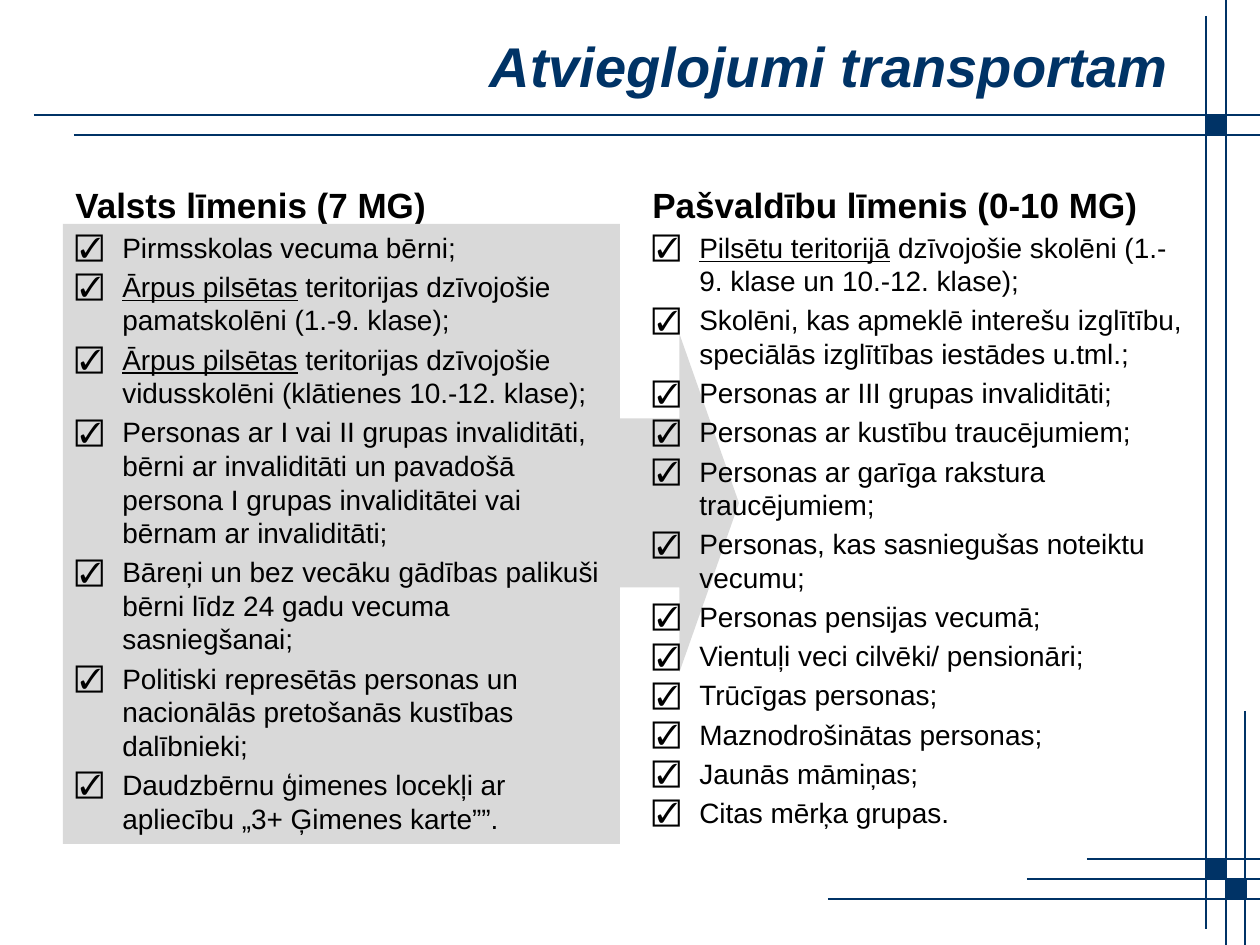
"""Build the slide on transport discounts at state and municipal level."""
from lxml import etree
from pptx import Presentation
from pptx import util as u
from pptx.dml.color import RGBColor
from pptx.enum import shapes, text
from pptx.oxml.ns import qn

NAVY = RGBColor(0x00, 0x33, 0x66)
GREY = RGBColor(0xD9, 0xD9, 0xD9)
BLACK = RGBColor(0x00, 0x00, 0x00)

FONT = "Arial"
EMU_PER_PX = 914400 / 126
SQUARE = 20
COLUMN_WIDTH = 557
INDENT = 47

GRID_LINES = [
    (34, 115, 1260, 115),
    (74, 135, 1260, 135),
    (1226, 0, 1226, 945),
    (1206, 16, 1206, 929),
    (1027, 879, 1260, 879),
    (1087, 859, 1260, 859),
    (828, 899, 1260, 899),
    (1245, 711, 1245, 945),
]
GRID_SQUARES = [(1206, 115), (1206, 859), (1226, 879)]

STATE_GROUPS = [
    ("", "Pirmsskolas vecuma bērni;"),
    ("Ārpus pilsētas", " teritorijas dzīvojošie pamatskolēni (1.-9. klase);"),
    ("Ārpus pilsētas", " teritorijas dzīvojošie vidusskolēni (klātienes 10.-12. klase);"),
    ("", "Personas ar I vai II grupas invaliditāti, bērni ar invaliditāti un "
         "pavadošā persona I grupas invaliditātei vai bērnam ar invaliditāti;"),
    ("", "Bāreņi un bez vecāku gādības palikuši bērni līdz 24 gadu vecuma sasniegšanai;"),
    ("", "Politiski represētās personas un nacionālās pretošanās kustības dalībnieki;"),
    ("", "Daudzbērnu ģimenes locekļi ar apliecību „3+ Ģimenes karte””."),
]
MUNICIPAL_GROUPS = [
    ("Pilsētu teritorijā", " dzīvojošie skolēni (1.-9. klase un 10.-12. klase);"),
    ("", "Skolēni, kas apmeklē interešu izglītību, speciālās izglītības iestādes u.tml.;"),
    ("", "Personas ar III grupas invaliditāti;"),
    ("", "Personas ar kustību traucējumiem;"),
    ("", "Personas ar garīga rakstura traucējumiem;"),
    ("", "Personas, kas sasniegušas noteiktu vecumu;"),
    ("", "Personas pensijas vecumā;"),
    ("", "Vientuļi veci cilvēki/ pensionāri;"),
    ("", "Trūcīgas personas;"),
    ("", "Maznodrošinātas personas;"),
    ("", "Jaunās māmiņas;"),
    ("", "Citas mērķa grupas."),
]
COLUMNS = [
    (63, "Valsts līmenis (7 MG)", STATE_GROUPS, GREY),
    (640, "Pašvaldību līmenis (0-10 MG)", MUNICIPAL_GROUPS, None),
]


def px(length):
    return u.Emu(round(length * EMU_PER_PX))


class SlideBuilder:
    def __init__(self, presentation):
        self.slide = presentation.slides.add_slide(presentation.slide_layouts[5])

    def style(self, font, size, color=BLACK, bold=False, italic=False):
        font.name = FONT
        font.size = u.Pt(size)
        font.color.rgb = color
        font.bold = bold
        font.italic = italic

    def title(self, wording, left, top, width, height):
        shape = self.slide.shapes.title
        shape.left, shape.top, shape.width, shape.height = map(px, (left, top, width, height))
        frame = shape.text_frame
        frame.text = wording
        frame.auto_size = text.MSO_AUTO_SIZE.NONE
        frame.vertical_anchor = text.MSO_ANCHOR.MIDDLE
        paragraph = frame.paragraphs[0]
        paragraph.alignment = text.PP_ALIGN.RIGHT
        self.style(paragraph.runs[0].font, 32, NAVY, bold=True, italic=True)

    def line(self, x1, y1, x2, y2):
        connector = self.slide.shapes.add_connector(
            shapes.MSO_CONNECTOR.STRAIGHT, *map(px, (x1, y1, x2, y2)))
        connector.line.color.rgb = NAVY
        connector.line.width = u.Pt(0.75)
        etree.SubElement(connector._element.spPr, qn("a:effectLst"))

    def block(self, kind, left, top, width, height, fill, outlined=False):
        shape = self.slide.shapes.add_shape(kind, *map(px, (left, top, width, height)))
        shape.shadow.inherit = False
        shape.fill.solid()
        shape.fill.fore_color.rgb = fill
        if outlined:
            shape.line.color.rgb = NAVY
            shape.line.width = u.Pt(0.75)
        else:
            shape.line.fill.background()

    def text_box(self, left, top, width, height, anchor):
        box = self.slide.shapes.add_textbox(*map(px, (left, top, width, height)))
        box.text_frame.word_wrap = True
        box.text_frame.vertical_anchor = anchor
        return box

    def heading(self, wording, left, top, width, height):
        box = self.text_box(left, top, width, height, text.MSO_ANCHOR.BOTTOM)
        box.text_frame.text = wording
        self.style(box.text_frame.paragraphs[0].runs[0].font, 20, bold=True)

    def checklist(self, items, left, top, width, height, fill=None):
        box = self.text_box(left, top, width, height, text.MSO_ANCHOR.TOP)
        if fill is not None:
            box.fill.solid()
            box.fill.fore_color.rgb = fill
        frame = box.text_frame
        for index, (underlined, plain) in enumerate(items):
            paragraph = frame.add_paragraph() if index else frame.paragraphs[0]
            self.check_mark(paragraph)
            if index:
                paragraph.space_before = u.Pt(3.2)
            for wording, underline in ((underlined, True), (plain, False)):
                if wording:
                    run = paragraph.add_run()
                    run.text = wording
                    self.style(run.font, 16)
                    run.font.underline = underline

    def check_mark(self, paragraph):
        properties = paragraph._p.get_or_add_pPr()
        properties.set("marL", str(px(INDENT)))
        properties.set("indent", str(-px(INDENT)))
        etree.SubElement(properties, qn("a:buFont"), typeface=FONT)
        etree.SubElement(properties, qn("a:buChar"), char="☑")


def main():
    presentation = Presentation()
    presentation.slide_width = px(1260)
    presentation.slide_height = px(945)
    builder = SlideBuilder(presentation)
    for ends in GRID_LINES:
        builder.line(*ends)
    for left, top in GRID_SQUARES:
        builder.block(shapes.MSO_SHAPE.RECTANGLE, left, top, SQUARE, SQUARE, NAVY, outlined=True)
    builder.block(shapes.MSO_SHAPE.RIGHT_ARROW, 620, 334, 119, 338, GREY)
    builder.title("Atvieglojumi transportam ", 63, 27, 1134, 76)
    for left, heading, items, fill in COLUMNS:
        builder.heading(heading, left, 145, COLUMN_WIDTH, 87)
        builder.checklist(items, left, 224, COLUMN_WIDTH, 620, fill)
    presentation.save("out.pptx")


if __name__ == "__main__":
    main()
